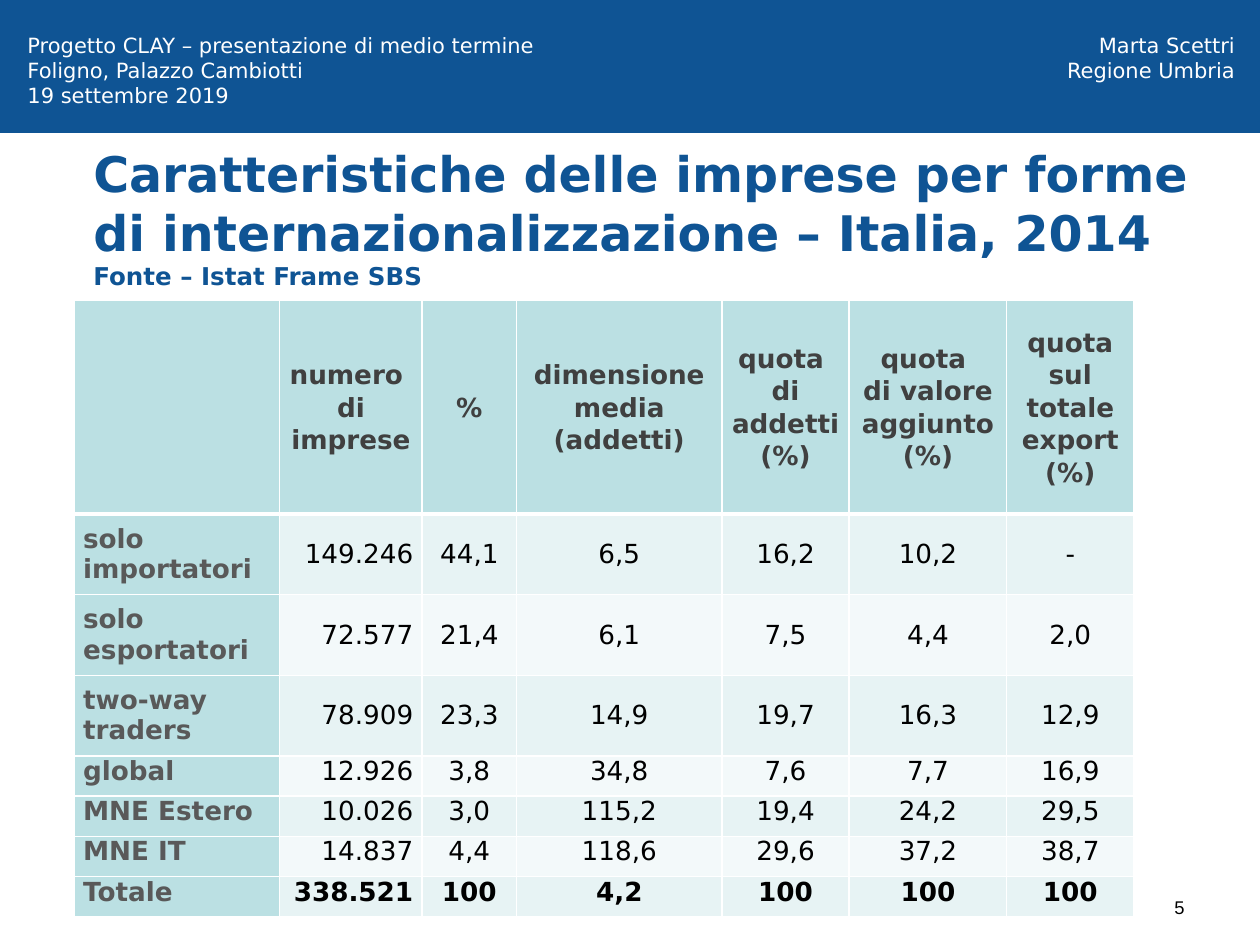
"""Builds a slide with a table of firms by form of internationalization."""
import pptx
import pptx.util
import pptx.dml.color
import pptx.enum.shapes
import pptx.enum.text
import pptx.oxml
import pptx.oxml.ns

Pt, Inches = pptx.util.Pt, pptx.util.Inches
RGBColor = pptx.dml.color.RGBColor
ALIGN = pptx.enum.text.PP_ALIGN
ANCHOR = pptx.enum.text.MSO_ANCHOR

BLUE = RGBColor(0x0F, 0x54, 0x94)
WHITE = RGBColor(0xFF, 0xFF, 0xFF)
BLACK = RGBColor(0, 0, 0)
HEAD_TEXT = RGBColor(0x40, 0x40, 0x40)
LABEL_TEXT = RGBColor(0x59, 0x59, 0x59)
TEAL = RGBColor(0xBB, 0xE0, 0xE3)
BANDS = RGBColor(0xF3, 0xF9, 0xFA), RGBColor(0xE7, 0xF3, 0xF4)
FONT = "DejaVu Sans"

WIDTH, HEIGHT = Inches(10), Inches(7.5)
COLUMNS = [1.63, 1.13, 0.75, 1.63, 1.01, 1.25, 1.01]
ROWS = [1.7] + [0.64] * 3 + [0.32] * 4
TALL_ROWS = 4
DATA = [
    ["", "numero \vdi imprese", "%", "dimensione media\v(addetti)",
     "quota \vdi addetti (%)", "quota \vdi valore aggiunto (%)",
     "quota sul totale export (%)"],
    ["solo importatori", "149.246", "44,1", "6,5", "16,2", "10,2", "-"],
    ["solo esportatori", "72.577", "21,4", "6,1", "7,5", "4,4", "2,0"],
    ["two-way traders", "78.909", "23,3", "14,9", "19,7", "16,3", "12,9"],
    ["global", "12.926", "3,8", "34,8", "7,6", "7,7", "16,9"],
    ["MNE Estero", "10.026", "3,0", "115,2", "19,4", "24,2", "29,5"],
    ["MNE IT", "14.837", "4,4", "118,6", "29,6", "37,2", "38,7"],
    ["Totale", "338.521", "100", "4,2", "100", "100", "100"],
]


def area(left, top, width, height):
    """Turn percentages of the slide into a left, top, width, height tuple."""
    return tuple(int(share * side / 100) for share, side in
                 zip((left, top, width, height), (WIDTH, HEIGHT) * 2))


def style(font, size, color, bold=False, name=FONT):
    """Set the size, colour, weight and typeface of a font."""
    font.size, font.bold, font.name = Pt(size), bold, name
    font.color.rgb = color


def add_bar(s):
    """Draw the blue band across the top."""
    sp = s.shapes.add_shape(pptx.enum.shapes.MSO_SHAPE.RECTANGLE,
                            *area(0, 0, 100, 14))
    sp.shadow.inherit = False
    sp.fill.solid()
    sp.fill.fore_color.rgb = BLUE
    sp.line.color.rgb = BLUE
    sp.line.width = Pt(0.75)


def add_text(s, box, text, align, size, color, name=FONT):
    """Add a wrapped text box with one paragraph per line of text."""
    tf = s.shapes.add_textbox(*box).text_frame
    tf.word_wrap = True
    tf.text = text
    for p in tf.paragraphs:
        p.alignment = align
        style(p.font, size, color, name=name)


def set_title(s, text, source):
    """Place the title and its smaller source line."""
    sp = s.shapes.title
    sp.left, sp.top, sp.width, sp.height = area(3.5, 14.27, 92.2, 17.47)
    tf = sp.text_frame
    tf.auto_size = pptx.enum.text.MSO_AUTO_SIZE.NONE
    tf.vertical_anchor = ANCHOR.MIDDLE
    p = tf.paragraphs[0]
    p.alignment = ALIGN.LEFT
    pPr = p._p.get_or_add_pPr()
    pPr.set("marL", str(Inches(0.29)))
    pPr.set("indent", "0")
    for part, size in ((text + "\v", 28), (source, 14)):
        r = p.add_run()
        r.text = part.rstrip("\v")
        style(r.font, size, BLUE, bold=True)
        if part.endswith("\v"):
            p.add_line_break()


def set_borders(cell, **widths):
    """Give a cell white borders, with widths in points by side."""
    tcPr = cell._tc.get_or_add_tcPr()
    for i, side in enumerate("LRTB"):
        tcPr.insert(i, pptx.oxml.parse_xml(
            f'<a:ln{side} {pptx.oxml.ns.nsdecls("a")} '
            f'w="{Pt(widths.get(side, 1))}"><a:solidFill>'
            f'<a:srgbClr val="{WHITE}"/></a:solidFill></a:ln{side}>'))


def fill_cell(cell, text, row, col):
    """Write and format one cell according to its row and column."""
    head, label = row == 0, col == 0
    cell.fill.solid()
    cell.fill.fore_color.rgb = TEAL if head or label else BANDS[row % 2]
    cell.margin_left = cell.margin_right = Inches(0.07)
    cell.margin_top = cell.margin_bottom = 0
    cell.vertical_anchor = ANCHOR.MIDDLE if row < TALL_ROWS else ANCHOR.TOP
    cell.text = text
    p = cell.text_frame.paragraphs[0]
    p.alignment = (ALIGN.CENTER if head else
                   {0: ALIGN.LEFT, 1: ALIGN.RIGHT}.get(col, ALIGN.CENTER))
    if head:
        p.line_spacing = 1.07
    color = HEAD_TEXT if head else LABEL_TEXT if label else BLACK
    style(p.font, 15, color, bold=head or label or row == len(DATA) - 1)
    set_borders(cell, **({"B": 3} if head else {"T": 3} if row == 1 else {}))


def add_data_table(s):
    """Add the table of firms."""
    table = s.shapes.add_table(len(ROWS), len(COLUMNS),
                               *area(5.9, 31.73, 84.3, 65.07)).table
    for column, width in zip(table.columns, COLUMNS):
        column.width = Inches(width)
    for row, height in zip(table.rows, ROWS):
        row.height = Inches(height)
    for i, values in enumerate(DATA):
        for j, value in enumerate(values):
            fill_cell(table.cell(i, j), value, i, j)


def main():
    """Build and save the slide."""
    prs = pptx.Presentation()
    prs.slide_width, prs.slide_height = WIDTH, HEIGHT
    s = prs.slides.add_slide(prs.slide_layouts[5])
    add_bar(s)
    add_text(s, area(71.7, 94.13, 23.3, 3.87), "5", ALIGN.RIGHT, 10.5, BLACK,
             name="Arial")
    set_title(s, "Caratteristiche delle imprese per forme di "
              "internazionalizzazione – Italia, 2014",
              "Fonte – Istat Frame SBS")
    add_data_table(s)
    add_text(s, area(1.2, 2.8, 45.7, 9.47),
             "Progetto CLAY – presentazione di medio termine\n"
             "Foligno, Palazzo Cambiotti\n19 settembre 2019",
             ALIGN.LEFT, 12, WHITE)
    add_text(s, area(56.3, 2.8, 42.7, 6.67), "Marta Scettri\nRegione Umbria",
             ALIGN.RIGHT, 12, WHITE)
    prs.save("out.pptx")


if __name__ == "__main__":
    main()
